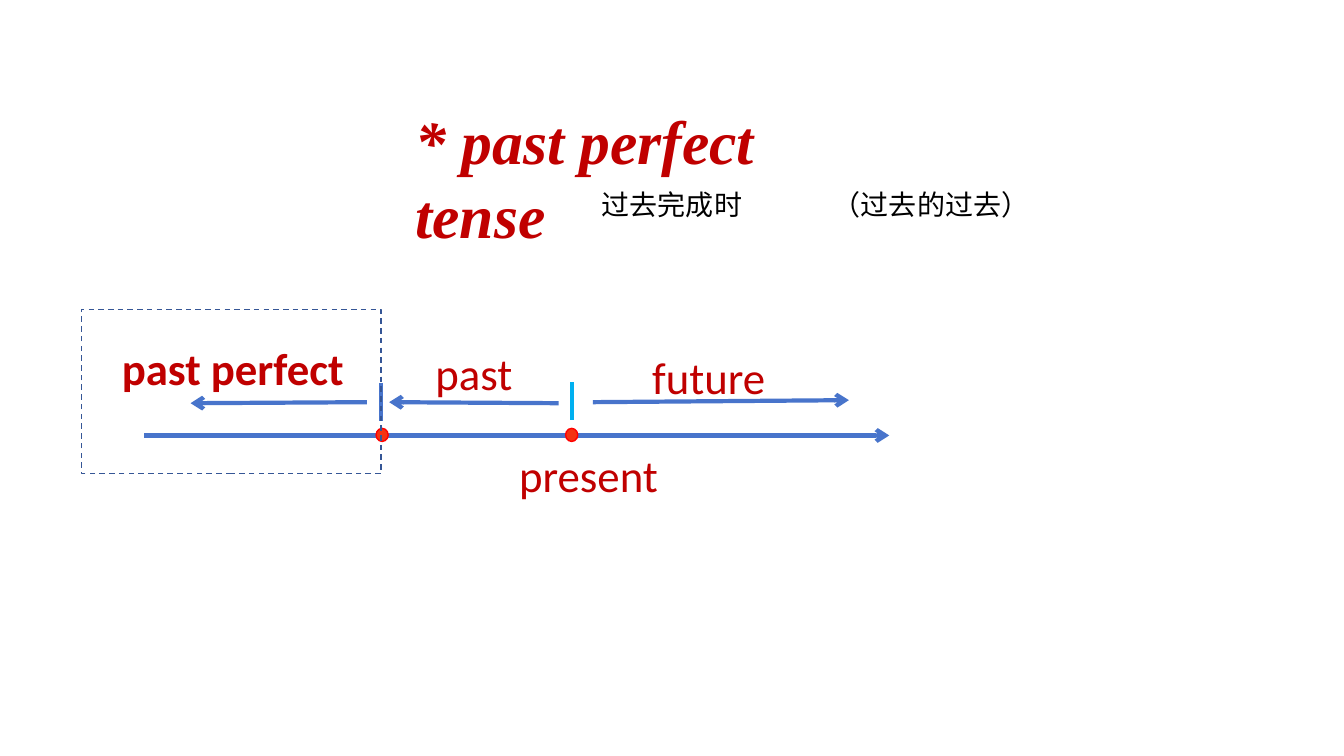
"""Build a timeline slide that explains the past perfect tense."""
from lxml import etree
from pptx import Presentation
from pptx.dml.color import RGBColor
from pptx.enum import dml, shapes, text
from pptx.oxml.ns import qn
from pptx.util import Inches, Pt

THEME = {
    "red": "C00000", "black": "000000", "blue": "4874CB", "cyan": "00B0F0",
    "dot": "F43312", "dot edge": "FF0000", "frame": "355696",
    "latin": "Calibri", "title": "Times New Roman", "chinese": "Noto Sans CJK SC",
    "title size": 44, "label size": 32, "note size": 20,
    "thick": 3, "thin": 1,
}
TITLE = ("* past perfect tense", (4.02, 0.97, 5, 0.84))
LABELS = [
    ("present", (5.05, 4.39, 2.23, 0.64), False),
    ("future", (6.37, 3.42, 1.82, 0.64), False),
    ("past", (4.22, 3.38, 1.28, 0.64), False),
    ("past perfect", (1.11, 3.33, 2.54, 0.64), True),
]
NOTES = [
    ("（过去的过去）", (7.76, 1.81, 2.95, 0.44)),
    ("过去完成时", (5.29, 1.81, 2.75, 0.44)),
]
ARROWS = [
    (1.43, 4.32, 8.82, 4.32),
    (5.88, 3.99, 8.42, 3.97),
    (5.54, 4, 3.86, 3.99),
    (3.64, 3.99, 1.89, 4),
]
TICKS = [(5.67, 3.79, "cyan"), (3.78, 3.8, "blue")]
TICK_HEIGHT = 0.38
DOT_LEFTS = [5.61, 3.73]
DOT_TOP, DOT_WIDTH, DOT_HEIGHT = 4.25, 0.12, 0.13
FRAME = (0.81, 3.07, 2.97, 1.63)


def inches(values):
    return [Inches(value) for value in values]


def color(name):
    return RGBColor.from_string(THEME[name])


def write(box, words, face, size, ink, bold=False, italic=False, align=text.PP_ALIGN.LEFT):
    frame = box.text_frame
    frame.word_wrap = True
    frame.auto_size = text.MSO_AUTO_SIZE.NONE
    frame.vertical_anchor = text.MSO_ANCHOR.TOP
    frame.text = words
    para = frame.paragraphs[0]
    para.alignment = align
    font = para.font
    font.name, font.size = THEME[face], Pt(THEME[size])
    font.bold, font.italic = bold, italic
    font.color.rgb = color(ink)
    latin = para._p.pPr.find(qn("a:defRPr")).find(qn("a:latin"))
    east_asian = etree.Element(qn("a:ea"), typeface=THEME[face])
    latin.addnext(east_asian)


def add_line(page, ends, ink, arrow=False):
    line = page.shapes.add_connector(shapes.MSO_CONNECTOR.STRAIGHT, *inches(ends))
    line.line.color.rgb = color(ink)
    line.line.width = Pt(THEME["thick"])
    if arrow:
        etree.SubElement(line.line._get_or_add_ln(), qn("a:tailEnd"), type="arrow")
    etree.SubElement(line._element.spPr, qn("a:effectLst"))


def add_outline(page, kind, place, ink):
    shape = page.shapes.add_shape(kind, *inches(place))
    shape.shadow.inherit = False
    shape.fill.background()
    shape.line.color.rgb = color(ink)
    shape.line.width = Pt(THEME["thin"])
    return shape


def main():
    deck = Presentation()
    deck.slide_width, deck.slide_height = inches((13.33, 7.5))
    page = deck.slides.add_slide(deck.slide_layouts[5])

    heading = page.shapes.title
    words, place = TITLE
    heading.left, heading.top, heading.width, heading.height = inches(place)
    write(heading, words, "title", "title size", "red", bold=True, italic=True)

    for ends in ARROWS:
        add_line(page, ends, "blue", arrow=True)
    for left, top, ink in TICKS:
        add_line(page, (left, top, left, top + TICK_HEIGHT), ink)
    for left in DOT_LEFTS:
        place = (left, DOT_TOP, DOT_WIDTH, DOT_HEIGHT)
        dot = add_outline(page, shapes.MSO_SHAPE.FLOWCHART_CONNECTOR, place, "dot edge")
        dot.fill.solid()
        dot.fill.fore_color.rgb = color("dot")

    for words, place, bold in LABELS:
        box = page.shapes.add_textbox(*inches(place))
        write(box, words, "latin", "label size", "red", bold=bold)
    for words, place in NOTES:
        box = page.shapes.add_textbox(*inches(place))
        write(box, words, "chinese", "note size", "black", align=text.PP_ALIGN.CENTER)

    frame = add_outline(page, shapes.MSO_SHAPE.RECTANGLE, FRAME, "frame")
    frame.line.dash_style = dml.MSO_LINE.DASH
    deck.save("out.pptx")


if __name__ == "__main__":
    main()
